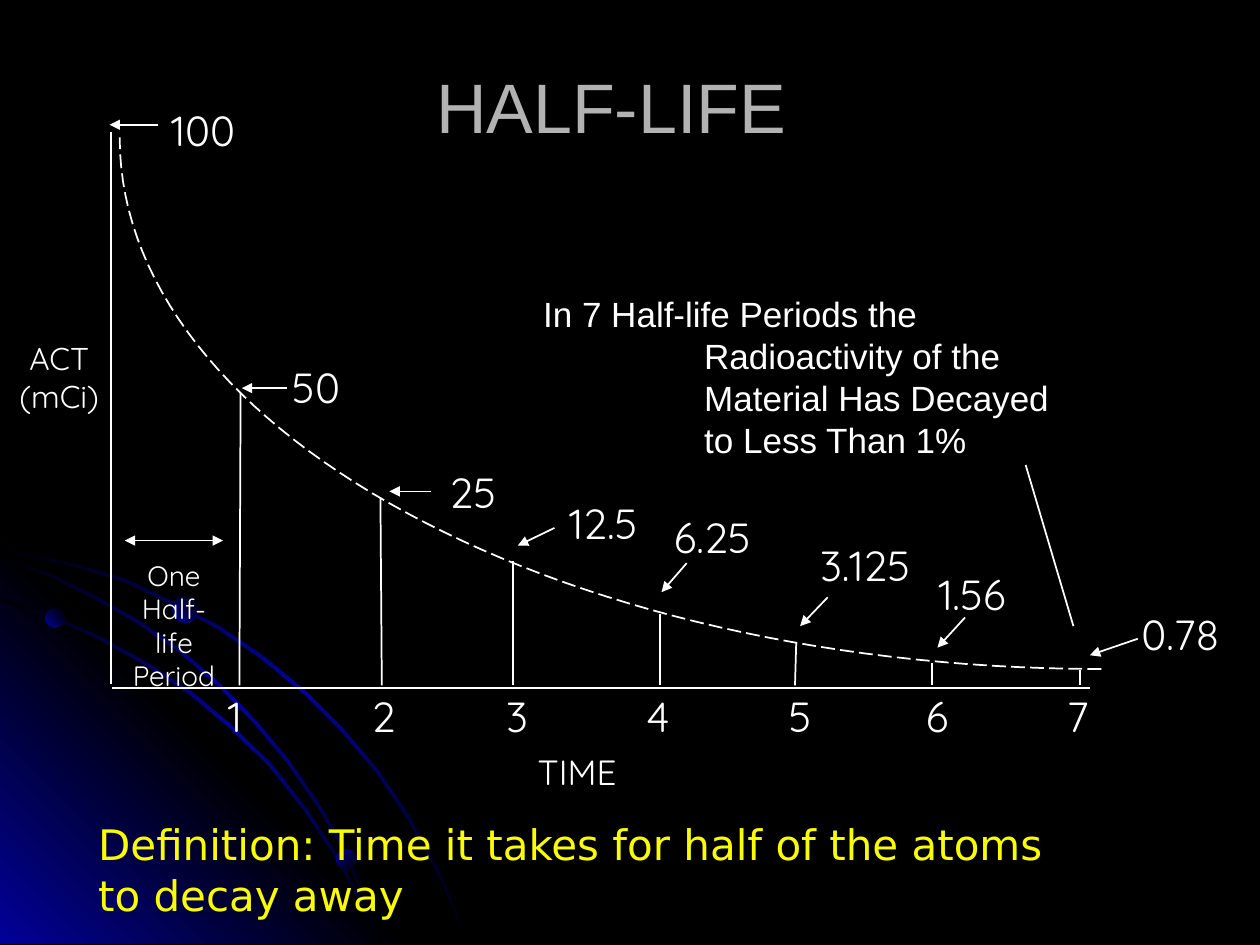
import copy

import pptx
import pptx.dml.color
import pptx.enum.dml
import pptx.enum.shapes
import pptx.enum.text
import pptx.oxml
import pptx.oxml.ns
import pptx.util

Pt = pptx.util.Pt
RGBColor = pptx.dml.color.RGBColor
ALIGN = pptx.enum.text.PP_ALIGN
BLACK = RGBColor(0x00, 0x00, 0x00)
BLUE = RGBColor(0x01, 0x01, 0x99)
WHITE = RGBColor(0xFF, 0xFF, 0xFF)
GRAY = RGBColor(0xB2, 0xB2, 0xB2)
YELLOW = RGBColor(0xFA, 0xFD, 0x00)

prs = pptx.Presentation()
prs.slide_width, prs.slide_height = Pt(720), Pt(540)
s = prs.slides.add_slide(prs.slide_layouts[6])
s.background.fill.solid()
s.background.fill.fore_color.rgb = BLACK


def add_text(x, y, w, h, lines, size, font="Quicksand", color=WHITE, align=ALIGN.LEFT):
    sp = s.shapes.add_textbox(Pt(x), Pt(y), Pt(w), Pt(h))
    tf = sp.text_frame
    tf.word_wrap = True
    for i, line in enumerate(lines):
        p = tf.paragraphs[0] if i == 0 else tf.add_paragraph()
        p.alignment = align
        for j, part in enumerate(line.split("\n")):
            if j:
                p.add_line_break()
            r = p.add_run()
            r.text = part
            r.font.size, r.font.name = Pt(size), font
            r.font.color.rgb = color
    return tf


def add_line(x1, y1, x2, y2, ends=()):
    cn = s.shapes.add_connector(pptx.enum.shapes.MSO_CONNECTOR.STRAIGHT,
                                Pt(x1), Pt(y1), Pt(x2), Pt(y2))
    cn.line.color.rgb = WHITE
    cn.line.width = Pt(1)
    ln = cn.line._get_or_add_ln()
    for end in ends:
        ln.append(pptx.oxml.parse_xml(
            f'<a:{end} {pptx.oxml.ns.nsdecls("a")} type="triangle"/>'))
    cn._element.spPr.append(pptx.oxml.parse_xml(
        f'<a:effectLst {pptx.oxml.ns.nsdecls("a")}/>'))


# Background: arcs given by their upper edge, a corner triangle and three dots
arcs = [
    [(0, 313.2), (41, 321.8), (70.6, 330.5), (97.9, 343.4), (125.3, 357.8), (150.5, 375.1),
     (174.2, 394.6), (195.8, 416.2), (216, 439.9), (234, 466.6), (253.4, 502.6), (267.8, 539.3)],
    [(0, 342), (29.5, 351.4), (56.9, 363.6), (84.2, 378.7), (109.4, 395.3), (132.5, 414.7),
     (154.8, 436.3), (174.2, 460.8), (191.5, 486.7), (205.9, 512.6), (218.2, 539.3)],
    [(0, 318.2), (28.1, 327.6), (54.7, 340.6), (79.9, 355), (103.7, 371.5), (126, 391),
     (146.9, 412.6), (164.9, 434.2), (182.9, 460.1), (193.7, 478.8), (203, 499),
     (211.7, 518.4), (218.2, 539.3)],
]
ribbons = [(arc + [(max(x - 1, 0), min(y + 1.4, 539.3)) for x, y in reversed(arc)],
            45, [BLACK, BLUE, BLACK]) for arc in arcs]
corner = ([(0, 307.4), (231.8, 539.3), (0, 539.3)], 315, [BLUE, BLACK, BLUE])
backdrop = []
for points, angle, colors in [ribbons[0], corner, *ribbons[1:]]:
    pts = [(Pt(x), Pt(y)) for x, y in points]
    fb = s.shapes.build_freeform(*pts[0])
    fb.add_line_segments(pts[1:], close=True)
    backdrop.append((fb.convert_to_shape(), angle, colors))
for x, y, d, angle in [(25.9, 347.8, 10.8, 315), (192.2, 485.3, 11.5, 45),
                       (98.6, 340.6, 15.1, 315)]:
    sp = s.shapes.add_shape(pptx.enum.shapes.MSO_SHAPE.OVAL, Pt(x), Pt(y), Pt(d), Pt(d))
    backdrop.append((sp, angle, [BLUE, BLACK]))
for sp, angle, colors in backdrop:
    sp.shadow.inherit = False
    sp.line.fill.background()
    sp.fill.gradient()
    sp.fill.gradient_angle = 360 - angle
    if len(colors) == 3:
        last = sp._element.spPr.findall(".//" + pptx.oxml.ns.qn("a:gs"))[-1]
        last.addprevious(copy.deepcopy(last))
    for i, stop in enumerate(sp.fill.gradient_stops):
        stop.color.rgb = colors[i]
        stop.position = i / (len(colors) - 1)

# Title
tf = add_text(49, 24.5, 600.5, 72, ["HALF-LIFE"], 40, "Arial", GRAY, ALIGN.CENTER)
tf.vertical_anchor = pptx.enum.text.MSO_ANCHOR.MIDDLE

# Remark with a hanging indent
tf = add_text(42.5, 163.4, 676.1, 108,
              ["In 7 Half-life Periods the\nRadioactivity of the\n"
               "Material Has Decayed\nto Less Than 1%"], 20, "Arial")
p = tf.paragraphs[0]
p.line_spacing = Pt(24)
pPr = p._p.get_or_add_pPr()
pPr.set("marL", str(Pt(352.8)))
pPr.set("indent", str(-Pt(92)))
add_line(586.1, 265.7, 613.4, 357.8)

# Axes
add_line(63.4, 75.6, 63.4, 391)
add_line(64.1, 393.1, 622.8, 393.1)
add_text(0, 190.1, 67.7, 50.4, ["ACT", "(mCi)"], 18, align=ALIGN.CENTER)
add_text(300.2, 425.5, 65.5, 31, ["TIME"], 20)

# Decay curve: a cubic Bezier sampled in equal steps
bezier = [(629.3, 382.3), (319.7, 382.3), (68.4, 246.2), (68.4, 78.5)]
steps = 60
curve = []
for i in range(steps + 1):
    t = i / steps
    weights = [(1 - t) ** 3, 3 * t * (1 - t) ** 2, 3 * t ** 2 * (1 - t), t ** 3]
    curve.append(tuple(Pt(sum(w * c[axis] for w, c in zip(weights, bezier)))
                       for axis in (0, 1)))
fb = s.shapes.build_freeform(*curve[0])
fb.add_line_segments(curve[1:], close=False)
sp = fb.convert_to_shape()
sp.shadow.inherit = False
sp.fill.background()
sp.line.color.rgb = WHITE
sp.line.width = Pt(1)
sp.line.dash_style = pptx.enum.dml.MSO_LINE.LONG_DASH

# Half-life marks: foot x, top x, top y, left of the number
marks = [(136.8, 137.5, 224.6, 123.1), (218.2, 217.4, 284.4, 205.2),
         (293, 293, 320.4, 282.2), (377.3, 377.3, 350.6, 362.2),
         (454.3, 455, 367.2, 443.5), (532.8, 532.8, 378.7, 522),
         (617, 617, 383, 602.6)]
for n, (foot, top_x, top_y, left) in enumerate(marks, 1):
    add_line(foot, 391.7, top_x, top_y)
    add_text(left, 391.2, 27.4, 36, [str(n)], 24)

# Activity values: left, top, width, then the arrow to the curve
values = [
    ("100", 90.7, 56.2, 57.6, (90, 71.3, 62.6, 71.3)),
    ("50", 159.8, 203, 45, (164.2, 221.8, 138.2, 221.8)),
    ("25", 249.8, 262.8, 43.2, (246.2, 280.8, 222.5, 280.8)),
    ("12.5", 318.2, 280.8, 64.1, (316.8, 301.7, 295.9, 311.8)),
    ("6.25", 378, 288.7, 64.1, (392.4, 321.8, 378, 338.4)),
    ("3.125", 461.5, 304.6, 78.5, (473, 341.3, 457.2, 357.8)),
    ("1.56", 529.2, 321.1, 64.1, (551.5, 352.8, 535.7, 370.1)),
    ("0.78", 645.1, 344.2, 64.1, (650.2, 365, 622.8, 374.4)),
]
for label, x, y, w, arrow in values:
    add_text(x, y, w, 36, [label], 24)
    add_line(*arrow, ends=["tailEnd"])

# One half-life period
add_line(71.3, 308.9, 127.4, 308.9, ends=["headEnd", "tailEnd"])
add_text(63.4, 315.4, 72, 64.8, ["One", "Half-life", "Period"], 16, align=ALIGN.CENTER)

# Definition
add_text(49, 464.4, 614.2, 64.8,
         ["Definition: Time it takes for half of the atoms\nto decay away"],
         24, "DejaVu Sans", YELLOW)

prs.save("out.pptx")
